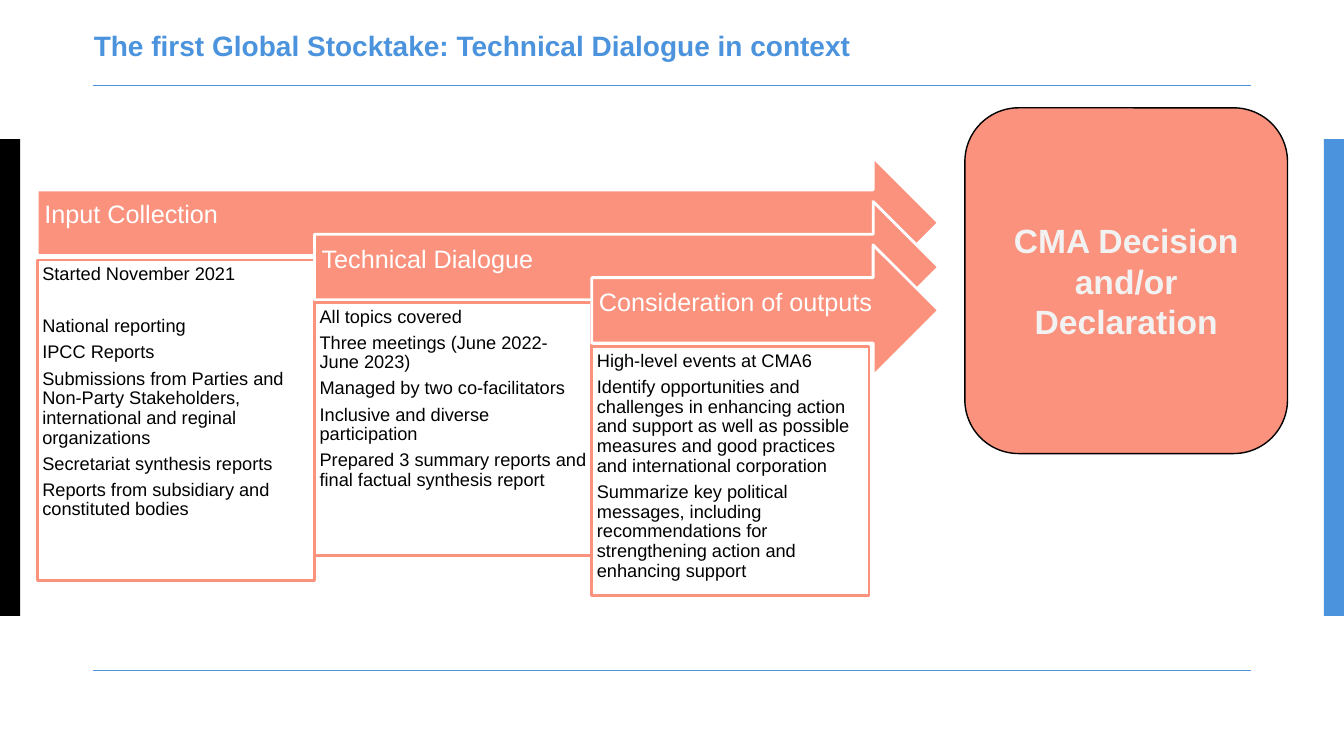
from pptx import Presentation
from pptx.dml.color import RGBColor
from pptx.enum import shapes, text
from pptx.util import Inches, Pt
from lxml import etree

COLORS = {
    "blue": "4B93DC",
    "salmon": "FB927D",
    "black": "000000",
    "white": "FFFFFF",
    "pale": "F2F2F2",
}
FONT = "Arial"
DRAWING_NS = "http://schemas.openxmlformats.org/drawingml/2006/main"

STEP_LEFT, STEP_WIDTH, ARROW_RIGHT, ARROW_HEIGHT = 0.37, 2.75, 9.31, 1.3
STEPS = [
    ("Input Collection", 1.56, 2.58, 3.18, [
        "Started November 2021",
        "National reporting",
        "IPCC Reports",
        "Submissions from Parties and Non-Party Stakeholders, "
        "international and reginal organizations",
        "Secretariat synthesis reports",
        "Reports from subsidiary and constituted bodies",
    ]),
    ("Technical Dialogue", 2.0, 3.0, 2.51, [
        "All topics covered",
        "Three meetings (June 2022-June 2023)",
        "Managed by two co-facilitators",
        "Inclusive and diverse participation",
        "Prepared 3 summary reports and final factual synthesis report",
    ]),
    ("Consideration of outputs", 2.43, 3.44, 2.47, [
        "High-level events at CMA6",
        "Identify opportunities and challenges in enhancing action and support "
        "as well as possible measures and good practices and international corporation",
        "Summarize key political messages, including recommendations for "
        "strengthening action and enhancing support",
    ]),
]
DATE_GAP = 18.6


def color(name):
    """Return the named palette colour."""
    return RGBColor.from_string(COLORS[name])


def add_box(slide, kind, box, fill, line=None, line_width=1):
    """Add a flat preset shape in a box of inches."""
    shape = slide.shapes.add_shape(kind, *map(Inches, box))
    shape.shadow.inherit = False
    shape.fill.solid()
    shape.fill.fore_color.rgb = color(fill)
    if line:
        shape.line.color.rgb = color(line)
        shape.line.width = Pt(line_width)
    else:
        shape.line.fill.background()
    return shape


def write(shape, lines, size, font_color, insets, anchor, align=text.PP_ALIGN.LEFT, bold=False):
    """Write paragraphs into a shape and return them."""
    frame = shape.text_frame
    frame.word_wrap = True
    frame.vertical_anchor = anchor
    frame.margin_left, frame.margin_top, frame.margin_right, frame.margin_bottom = map(Inches, insets)
    frame.text = "\n".join(lines)
    for paragraph in frame.paragraphs:
        paragraph.alignment = align
        paragraph.font.name = FONT
        paragraph.font.size = Pt(size)
        paragraph.font.bold = bold
        paragraph.font.color.rgb = color(font_color)
    return frame.paragraphs


def add_frame(slide, width):
    """Draw the side bars and the two rules across the slide."""
    for left, fill in ((0, "black"), (width - 0.2, "blue")):
        add_box(slide, shapes.MSO_SHAPE.RECTANGLE, (left, 1.38, 0.2, 4.73), fill)
    for top in (0.85, 6.65):
        rule = slide.shapes.add_connector(
            shapes.MSO_CONNECTOR.STRAIGHT, Inches(0.92), Inches(top), Inches(12.41), Inches(top))
        rule.line.color.rgb = color("blue")
        rule.line.width = Pt(1)
        etree.SubElement(rule._element.spPr, f"{{{DRAWING_NS}}}effectLst")


def add_title(slide, box, title):
    """Place and format the title placeholder."""
    shape = slide.shapes.title
    shape.left, shape.top, shape.width, shape.height = map(Inches, box)
    paragraphs = write(shape, [title], 20, "blue", (0, 0, 0, 0), text.MSO_ANCHOR.MIDDLE, bold=True)
    paragraphs[0].line_spacing = Pt(15)


def add_step(slide, arrow_box, detail_box, heading, details):
    """Draw a headed arrow with its box of details below."""
    arrow = add_box(slide, shapes.MSO_SHAPE.RIGHT_ARROW, arrow_box, "salmon", "white", 2)
    headings = write(arrow, [heading], 18, "white", (0.07, 0.07, 0.28, 0.21), text.MSO_ANCHOR.MIDDLE)
    panel = add_box(slide, shapes.MSO_SHAPE.RECTANGLE, detail_box, "white", "salmon", 2)
    paragraphs = write(panel, details, 13, "black", (0.05,) * 4, text.MSO_ANCHOR.TOP)
    for paragraph in headings + paragraphs:
        paragraph.line_spacing = 0.9
        paragraph.space_after = Pt(0.35 * paragraph.font.size.pt)
    return paragraphs


def add_steps(slide):
    """Cascade the three steps, all arrows ending at one edge."""
    for index, (heading, arrow_top, detail_top, detail_height, details) in enumerate(STEPS):
        left = STEP_LEFT + index * STEP_WIDTH
        paragraphs = add_step(
            slide,
            (left, arrow_top, ARROW_RIGHT - left, ARROW_HEIGHT),
            (left, detail_top, STEP_WIDTH, detail_height),
            heading, details)
        if index == 0:
            paragraphs[1].space_before = Pt(DATE_GAP)


def add_outcome(slide, box, label):
    """Draw the rounded box with the final outcome."""
    shape = add_box(slide, shapes.MSO_SHAPE.ROUNDED_RECTANGLE, box, "salmon", "black")
    write(shape, [label], 24, "pale", (0, 0, 0, 0), text.MSO_ANCHOR.MIDDLE,
          text.PP_ALIGN.CENTER, bold=True)


def main():
    """Build and save the presentation."""
    presentation = Presentation()
    presentation.slide_width, presentation.slide_height = Inches(13.33), Inches(7.5)
    slide = presentation.slides.add_slide(presentation.slide_layouts[5])
    add_frame(slide, 13.33)
    add_title(slide, (0.93, 0.34, 11.47, 0.34), "The first Global Stocktake: Technical Dialogue in context")
    add_steps(slide)
    add_outcome(slide, (9.57, 1.07, 3.2, 3.43), "CMA Decision and/or Declaration")
    presentation.save("out.pptx")


if __name__ == "__main__":
    main()
